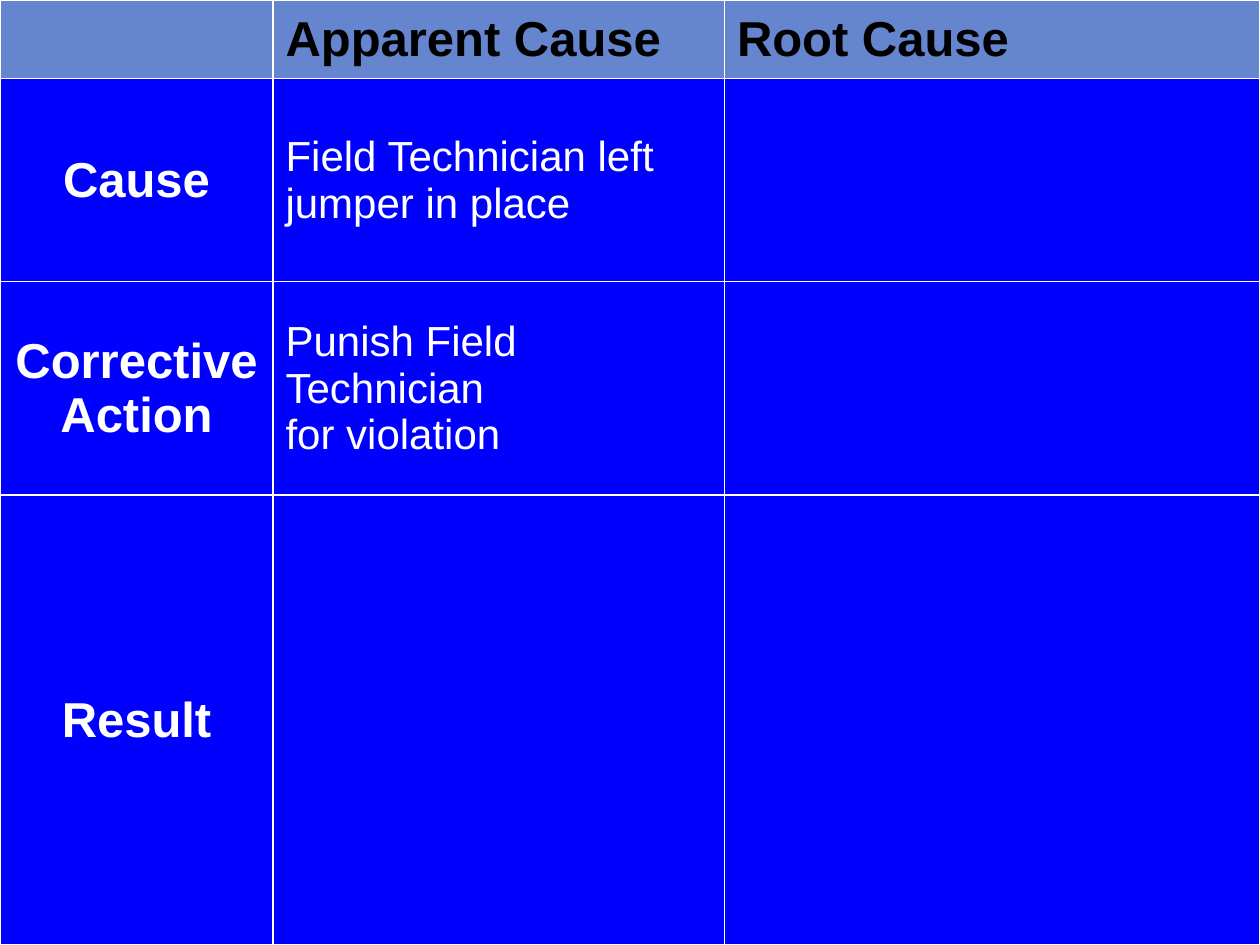
from lxml import etree
from pptx import Presentation
from pptx.dml.color import RGBColor
from pptx.enum.text import MSO_ANCHOR, PP_ALIGN
from pptx.oxml.ns import qn
from pptx.util import Pt

MIDDLE = MSO_ANCHOR.MIDDLE
CENTER, LEFT = PP_ALIGN.CENTER, PP_ALIGN.LEFT

CAUSE_TABLE = [
    [[], ["Apparent Cause"], ["Root Cause"]],
    [["Cause"], ["Field Technician left jumper in place"], []],
    [["Corrective Action"], ["Punish Field Technician", "for violation"], []],
    [["Result"], [], []],
]
COLUMN_WIDTHS = [156, 258, 306]
ROW_HEIGHTS = [45, 116, 122, 257]

THEME = {
    "font": "Arial",
    "heading_size": 28,
    "body_size": 24,
    "border_width": 1,
    "background": "0000FF",
    "header_fill": "6685CF",
    "header_text": "000000",
    "text": "FFFFFF",
    "border": "FFFFFF",
}


def color(role):
    return RGBColor.from_string(THEME[role])


def add_borders(cell):
    properties = cell._tc.get_or_add_tcPr()
    for position, side in enumerate(("lnL", "lnR", "lnT", "lnB")):
        line = etree.Element(qn(f"a:{side}"), w=str(Pt(THEME["border_width"])))
        solid = etree.SubElement(line, qn("a:solidFill"))
        etree.SubElement(solid, qn("a:srgbClr"), val=THEME["border"])
        properties.insert(position, line)


def fill_cell(cell, paragraphs, is_header, is_row_label):
    cell.fill.solid()
    cell.fill.fore_color.rgb = color("header_fill" if is_header else "background")
    cell.vertical_anchor = MIDDLE
    add_borders(cell)
    is_heading = is_header or is_row_label
    for index, wording in enumerate(paragraphs):
        frame = cell.text_frame
        paragraph = frame.add_paragraph() if index else frame.paragraphs[0]
        paragraph.alignment = CENTER if is_row_label else LEFT
        run = paragraph.add_run()
        run.text = wording
        run.font.name = THEME["font"]
        run.font.size = Pt(THEME["heading_size" if is_heading else "body_size"])
        run.font.bold = is_heading
        run.font.color.rgb = color("header_text" if is_header else "text")


def main():
    deck = Presentation()
    deck.slide_width = Pt(sum(COLUMN_WIDTHS))
    deck.slide_height = Pt(sum(ROW_HEIGHTS))
    slide = deck.slides.add_slide(deck.slide_layouts[6])
    slide.background.fill.solid()
    slide.background.fill.fore_color.rgb = color("background")

    table = slide.shapes.add_table(
        len(ROW_HEIGHTS), len(COLUMN_WIDTHS), 0, 0, deck.slide_width, deck.slide_height
    ).table
    table.horz_banding = False
    for column, width in zip(table.columns, COLUMN_WIDTHS):
        column.width = Pt(width)
    for row, height in zip(table.rows, ROW_HEIGHTS):
        row.height = Pt(height)
    for r, contents in enumerate(CAUSE_TABLE):
        for c, paragraphs in enumerate(contents):
            fill_cell(table.cell(r, c), paragraphs, r == 0, c == 0)

    deck.save("out.pptx")


if __name__ == "__main__":
    main()
